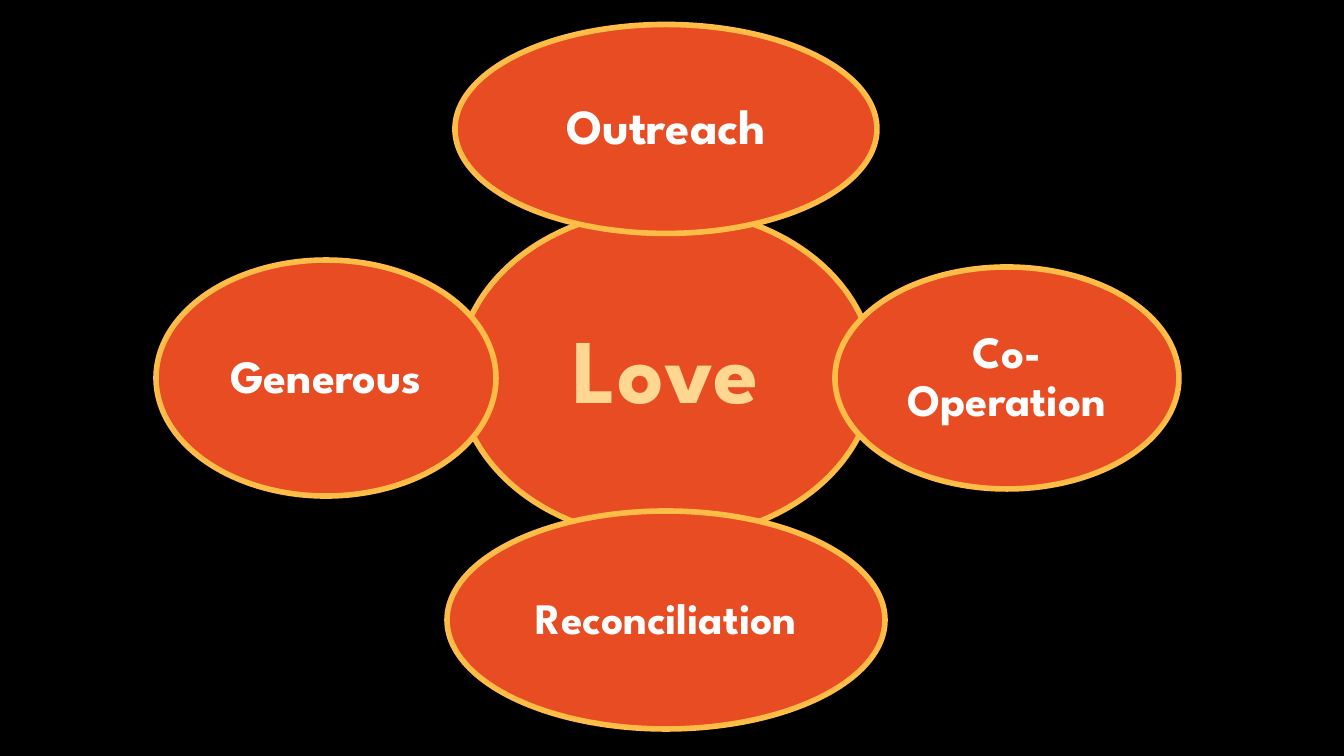
from pptx import Presentation
from pptx.dml.color import RGBColor
from pptx.enum.shapes import MSO_SHAPE
from pptx.enum.text import MSO_ANCHOR, PP_ALIGN
from pptx.util import Pt

OVAL = MSO_SHAPE.OVAL
MIDDLE = MSO_ANCHOR.MIDDLE
CENTER = PP_ALIGN.CENTER

PX = 914400 / 100.8
SLIDE_W, SLIDE_H = 1344, 756
FONT = "League Spartan"
COLORS = {
    "background": "000000",
    "fill": "E84C22",
    "outline": "FFBD47",
    "hub": "FFD791",
    "petal": "FFFFFF",
}

# text, role, centre x, centre y, width, height, font size; back to front
OVALS = [
    ("Love", "hub", 666, 374, 416, 330, 65),
    ("Outreach", "petal", 666, 129, 422, 209, 35),
    ("Co-Operation", "petal", 1007, 378, 344, 222, 32),
    ("Reconciliation", "petal", 666, 620, 438, 218, 31),
    ("Generous", "petal", 326, 378, 340, 236, 33),
]
PADDING = {"hub": 9, "petal": 5}


def emu(px):
    return round(px * PX)


def rgb(name):
    return RGBColor.from_string(COLORS[name])


def add_oval(slide, text, role, cx, cy, w, h, size):
    sp = slide.shapes.add_shape(
        OVAL, emu(cx - w / 2), emu(cy - h / 2), emu(w), emu(h))
    sp.shadow.inherit = False
    sp.fill.solid()
    sp.fill.fore_color.rgb = rgb("fill")
    sp.line.color.rgb = rgb("outline")
    sp.line.width = Pt(4)

    tf = sp.text_frame
    tf.word_wrap = True
    tf.vertical_anchor = MIDDLE
    tf.margin_left = tf.margin_right = emu(PADDING[role])
    tf.margin_top = tf.margin_bottom = emu(PADDING[role])
    p = tf.paragraphs[0]
    p.alignment = CENTER
    p.line_spacing = 0.9
    r = p.add_run()
    r.text = text
    r.font.name = FONT
    r.font.size = Pt(size)
    r.font.bold = True
    r.font.color.rgb = rgb(role)


def main():
    prs = Presentation()
    prs.slide_width, prs.slide_height = emu(SLIDE_W), emu(SLIDE_H)
    slide = prs.slides.add_slide(prs.slide_layouts[6])
    slide.background.fill.solid()
    slide.background.fill.fore_color.rgb = rgb("background")
    for oval in OVALS:
        add_oval(slide, *oval)
    prs.save("out.pptx")


if __name__ == "__main__":
    main()
